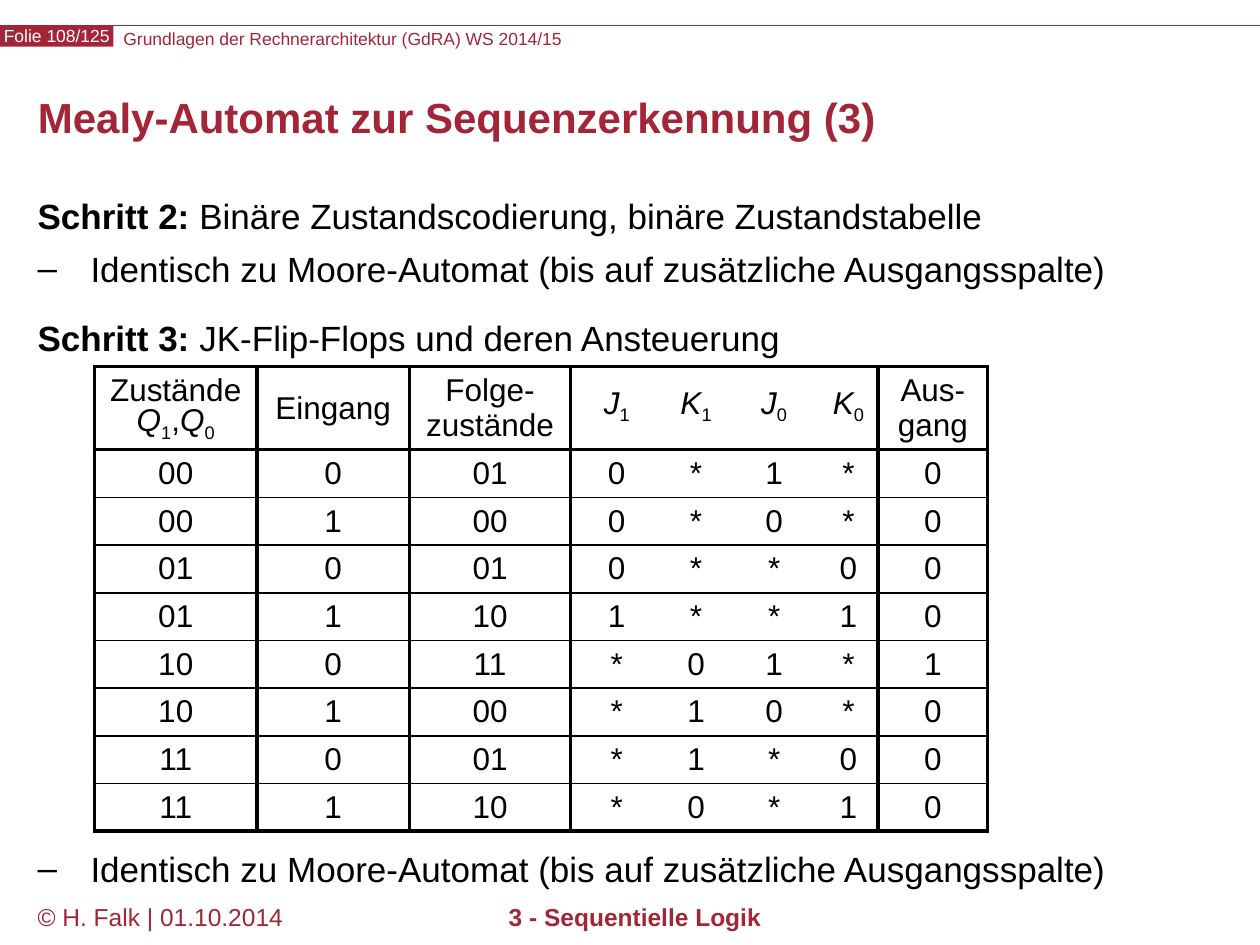
from lxml import etree
from pptx import Presentation
from pptx.dml.color import RGBColor
from pptx.enum.shapes import MSO_CONNECTOR, MSO_SHAPE
from pptx.enum.text import MSO_ANCHOR, PP_ALIGN
from pptx.oxml.ns import qn
from pptx.util import Inches, Pt

RED = RGBColor(0xA3, 0x26, 0x38)
BLACK = RGBColor(0, 0, 0)
WHITE = RGBColor(0xFF, 0xFF, 0xFF)
LEFT, CENTER = PP_ALIGN.LEFT, PP_ALIGN.CENTER
TOP, MIDDLE = MSO_ANCHOR.TOP, MSO_ANCHOR.MIDDLE
STRAIGHT, RECTANGLE = MSO_CONNECTOR.STRAIGHT, MSO_SHAPE.RECTANGLE
FONT = "Arial"

# Content: a run is (text, style), style is "", "bold", "italic" or "sub"
COURSE = "Grundlagen der Rechnerarchitektur (GdRA) WS 2014/15"
PAGE = "Folie 108/125"
COPYRIGHT = "© H. Falk | 01.10.2014"
CHAPTER = "3 - Sequentielle Logik"
TITLE = "Mealy-Automat zur Sequenzerkennung (3)"
STEP_2 = [("Schritt 2:", "bold"), (" Binäre Zustandscodierung, binäre Zustandstabelle", "")]
STEP_3 = [("Schritt 3:", "bold"), (" JK-Flip-Flops und deren Ansteuerung", "")]
REMARK = [("Identisch zu Moore-Automat (bis auf zusätzliche Ausgangsspalte)", "")]


def indexed(letter, index):
    return [(letter, "italic"), (index, "sub")]


HEADER = [
    [[("Zustände", "")], indexed("Q", "1") + [(",", "")] + indexed("Q", "0")],
    [[("Eingang", "")]],
    [[("Folge-zustände", "")]],
    [indexed("J", "1")],
    [indexed("K", "1")],
    [indexed("J", "0")],
    [indexed("K", "0")],
    [[("Aus-gang", "")]],
]
STATES = [
    ("00", "0", "01", "0", "*", "1", "*", "0"),
    ("00", "1", "00", "0", "*", "0", "*", "0"),
    ("01", "0", "01", "0", "*", "*", "0", "0"),
    ("01", "1", "10", "1", "*", "*", "1", "0"),
    ("10", "0", "11", "*", "0", "1", "*", "1"),
    ("10", "1", "00", "*", "1", "0", "*", "0"),
    ("11", "0", "01", "*", "1", "*", "0", "0"),
    ("11", "1", "10", "*", "0", "*", "1", "0"),
]
COLUMN_WIDTHS = [1.29, 1.21, 1.28, 0.73, 0.53, 0.71, 0.47, 0.87]
TABLE_HEIGHT, HEADER_HEIGHT = 3.68, 0.66
JK_FIRST, JK_LAST = 3, 6  # columns grouped without inner vertical lines
THICK, THIN = 2.25, 1


def add_runs(paragraph, runs, size, color=BLACK, align=LEFT):
    paragraph.alignment = align
    for text, style in runs:
        run = paragraph.add_run()
        run.text = text
        font = run.font
        font.name, font.size, font.color.rgb = FONT, Pt(size), color
        font.bold = style == "bold"
        font.italic = style == "italic"
        if style == "sub":
            font._element.set("baseline", "-25000")


def set_frame(frame, inset=None, anchor=TOP, wrap=True):
    frame.word_wrap = wrap
    frame.vertical_anchor = anchor
    if inset is not None:
        frame.margin_left = frame.margin_right = Inches(inset)
        frame.margin_top = frame.margin_bottom = Inches(inset)
    return frame


def add_box(slide, box, inset=None):
    return set_frame(slide.shapes.add_textbox(*map(Inches, box)).text_frame, inset)


def set_dash(paragraph):
    ppr = paragraph._p.get_or_add_pPr()
    ppr.set("marL", str(Inches(0.42)))
    ppr.set("indent", str(-Inches(0.42)))
    etree.SubElement(ppr, qn("a:buFont"), typeface=FONT)
    etree.SubElement(ppr, qn("a:buChar"), char="–")


def set_borders(cell, widths):
    tcpr = cell._tc.get_or_add_tcPr()
    for side, width in zip("LRTB", widths):
        line = etree.SubElement(tcpr, qn(f"a:ln{side}"), w=str(Pt(width)))
        if width:
            fill = etree.SubElement(line, qn("a:solidFill"))
            etree.SubElement(fill, qn("a:srgbClr"), val=str(BLACK))
        else:
            etree.SubElement(line, qn("a:noFill"))


def add_page_frame(slide):
    rule = slide.shapes.add_connector(STRAIGHT, 0, Inches(0.2), Inches(10), Inches(0.2))
    rule.line.color.rgb, rule.line.width = RED, Pt(0.75)
    etree.SubElement(rule._element.spPr, qn("a:effectLst"))

    course = add_box(slide, (0.98, 0.22, 6.6, 0.17), inset=0)
    add_runs(course.paragraphs[0], [(COURSE, "")], 10, RED)

    badge = slide.shapes.add_shape(RECTANGLE, 0, Inches(0.2), Inches(0.9), Inches(0.17))
    badge.shadow.inherit = False
    badge.fill.solid()
    badge.fill.fore_color.rgb = RED
    badge.line.fill.background()
    page = set_frame(badge.text_frame, 0, MIDDLE, wrap=False)
    add_runs(page.paragraphs[0], [(PAGE, "")], 10, WHITE, CENTER)

    footer = add_box(slide, (0.2, 7.11, 2.2, 0.39))
    add_runs(footer.paragraphs[0], [(COPYRIGHT, "")], 14, RED)
    chapter = add_box(slide, (2.01, 7.11, 6.06, 0.39))
    add_runs(chapter.paragraphs[0], [(CHAPTER, "bold")], 14, RED, CENTER)


def add_title(slide):
    title = slide.shapes.title
    title.left, title.top, title.width, title.height = map(Inches, (0.2, 0.6, 9.61, 0.72))
    paragraph = set_frame(title.text_frame, anchor=MIDDLE).paragraphs[0]
    paragraph.line_spacing = Pt(24)
    add_runs(paragraph, [(TITLE, "bold")], 24, RED)


def add_steps(slide):
    steps = add_box(slide, (0.2, 1.53, 9.61, 1.35))
    lines = [(STEP_2, 0.9, 0, False), (REMARK, 1.2, 1.5, True), (STEP_3, 0.9, 18, False)]
    for number, (runs, spacing, before, dashed) in enumerate(lines):
        paragraph = steps.add_paragraph() if number else steps.paragraphs[0]
        if dashed:
            set_dash(paragraph)
        paragraph.line_spacing, paragraph.space_before = spacing, Pt(before)
        add_runs(paragraph, runs, 20)

    remark = add_box(slide, (0.2, 6.68, 9.61, 0.42)).paragraphs[0]
    set_dash(remark)
    add_runs(remark, REMARK, 20)


def add_state_table(slide):
    rows = [HEADER] + [[[[(value, "")]] for value in state] for state in STATES]
    table = slide.shapes.add_table(
        len(rows), len(HEADER), Inches(0.75), Inches(2.91),
        Inches(sum(COLUMN_WIDTHS)), Inches(TABLE_HEIGHT)).table
    table.first_row = table.horz_banding = False
    for column, width in zip(table.columns, COLUMN_WIDTHS):
        column.width = Inches(width)
    state_height = (TABLE_HEIGHT - HEADER_HEIGHT) / len(STATES)
    for r, row in enumerate(rows):
        table.rows[r].height = Inches(state_height if r else HEADER_HEIGHT)
        for c, paragraphs in enumerate(row):
            cell = table.cell(r, c)
            set_borders(cell, (
                0 if JK_FIRST < c <= JK_LAST else THICK,
                0 if JK_FIRST <= c < JK_LAST else THICK,
                THICK if r <= 1 else THIN,
                THICK if r in (0, len(STATES)) else THIN))
            cell.fill.background()
            cell.vertical_anchor = TOP if r else MIDDLE
            for number, runs in enumerate(paragraphs):
                frame = cell.text_frame
                paragraph = frame.add_paragraph() if number else frame.paragraphs[0]
                paragraph.line_spacing = Pt(20)
                add_runs(paragraph, runs, 18, align=CENTER)


def main():
    presentation = Presentation()
    presentation.slide_width, presentation.slide_height = Inches(10), Inches(7.5)
    slide = presentation.slides.add_slide(presentation.slide_layouts[5])
    add_page_frame(slide)
    add_title(slide)
    add_steps(slide)
    add_state_table(slide)
    presentation.save("out.pptx")


if __name__ == "__main__":
    main()
